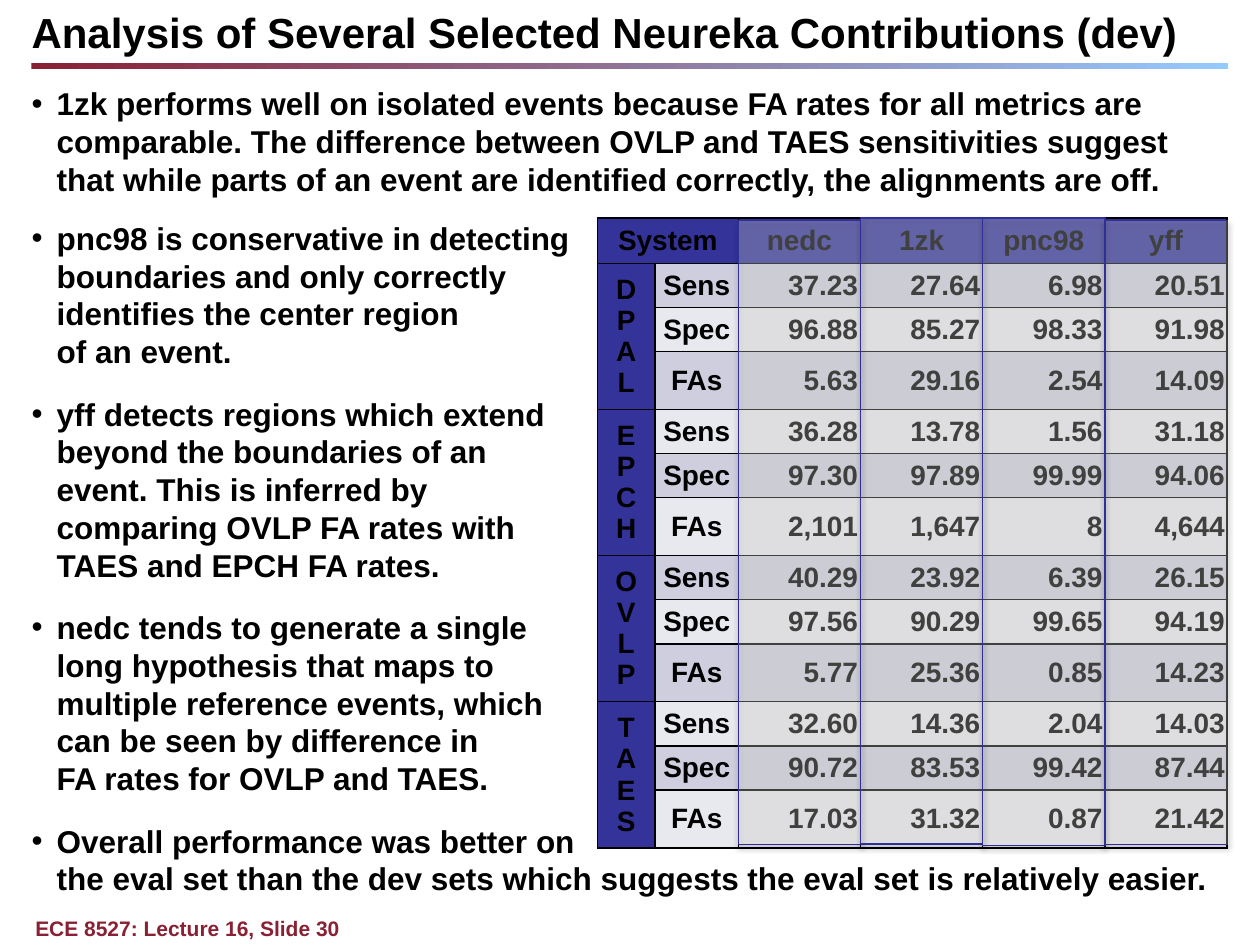
from lxml.etree import SubElement
from pptx import Presentation
from pptx.dml.color import RGBColor
from pptx.enum.shapes import MSO_SHAPE
from pptx.enum.text import MSO_ANCHOR, MSO_AUTO_SIZE, PP_ALIGN
from pptx.oxml.ns import qn
from pptx.util import Inches, Pt

TITLE = "Analysis of Several Selected Neureka Contributions (dev)"
FOOTER = "ECE 8527: Lecture 16, Slide 30"
FINDINGS = [
    ("1zk performs well on isolated events because FA rates for all metrics are comparable. "
     "The difference between OVLP and TAES sensitivities suggest that while parts of an event "
     "are identified correctly, the alignments are off.", 12),
    ("pnc98 is conservative in detecting\vboundaries and only correctly\v"
     "identifies the center region\vof an event.", 14),
    ("yff detects regions which extend\vbeyond the boundaries of an\v"
     "event. This is inferred by\vcomparing OVLP FA rates with\vTAES and EPCH FA rates.", 14),
    ("nedc tends to generate a single\vlong hypothesis that maps to\v"
     "multiple reference events, which\vcan be seen by difference in\v"
     "FA rates for OVLP and TAES.", 14),
    ("Overall performance was better on\vthe eval set than the dev sets which suggests "
     "the eval set is relatively easier.", 12),
]
SYSTEMS = ["nedc", "1zk", "pnc98", "yff"]
MEASURES = ["Sens", "Spec", "FAs"]
SCORES = {
    "DPAL": [["37.23", "27.64", "6.98", "20.51"],
             ["96.88", "85.27", "98.33", "91.98"],
             ["5.63", "29.16", "2.54", "14.09"]],
    "EPCH": [["36.28", "13.78", "1.56", "31.18"],
             ["97.30", "97.89", "99.99", "94.06"],
             ["2,101", "1,647", "8", "4,644"]],
    "OVLP": [["40.29", "23.92", "6.39", "26.15"],
             ["97.56", "90.29", "99.65", "94.19"],
             ["5.77", "25.36", "0.85", "14.23"]],
    "TAES": [["32.60", "14.36", "2.04", "14.03"],
             ["90.72", "83.53", "99.42", "87.44"],
             ["17.03", "31.32", "0.87", "21.42"]],
}
COLORS = {"text": "000000", "maroon": "892034", "sky": "95CAFF", "header": "333399",
          "odd": "CECEDE", "even": "E8E8EF", "veil": "FFFFF9", "veil_line": "2F2F98"}
COLUMN_WIDTHS = [0.46, 0.66] + [0.97] * len(SYSTEMS)
ROW_HEIGHTS = [0.36] + [0.35, 0.35, 0.46] * len(SCORES)
TABLE_LEFT, TABLE_TOP = 4.74, 1.73
VEILS = [(1.75, 4.95), (1.73, 4.97), (1.73, 4.98), (1.75, 4.95)]
NO_MARGINS = dict.fromkeys(["margin_left", "margin_top", "margin_right", "margin_bottom"], 0)


def color(name):
    return RGBColor.from_string(COLORS[name])


def apply(target, formats):
    for name, value in formats.items():
        setattr(target, name, value)


def style(paragraph, size, color_name="text", **formats):
    apply(paragraph, formats)
    apply(paragraph.font, {"size": Pt(size), "name": "Arial", "bold": True})
    paragraph.font.color.rgb = color(color_name)


def place(shape, left, top, width, height):
    apply(shape, {"left": Inches(left), "top": Inches(top),
                  "width": Inches(width), "height": Inches(height)})


def add_bullet(paragraph):
    properties = paragraph._p.get_or_add_pPr()
    properties.set("marL", str(Inches(0.2)))
    properties.set("indent", str(Inches(-0.2)))
    SubElement(properties, qn("a:buFont"), typeface="Arial")
    SubElement(properties, qn("a:buChar"), char="•")


def add_borders(cell):
    properties = cell._tc.get_or_add_tcPr()
    for side in ("lnL", "lnR", "lnT", "lnB"):
        line = SubElement(properties, qn(f"a:{side}"), w=str(Pt(1)))
        solid = SubElement(line, qn("a:solidFill"))
        SubElement(solid, qn("a:srgbClr"), val=COLORS["text"])


def fill_cell(cell, text, fill, align=PP_ALIGN.CENTER, pad=0.01):
    add_borders(cell)
    apply(cell, {"margin_left": Inches(0.02), "margin_right": Inches(0.02),
                 "margin_top": Inches(pad), "margin_bottom": Inches(pad),
                 "vertical_anchor": MSO_ANCHOR.MIDDLE})
    cell.fill.solid()
    cell.fill.fore_color.rgb = color(fill)
    cell.text = text
    style(cell.text_frame.paragraphs[0], 16, alignment=align)


def add_score_table(slide):
    table = slide.shapes.add_table(
        len(ROW_HEIGHTS), len(COLUMN_WIDTHS), Inches(TABLE_LEFT), Inches(TABLE_TOP),
        Inches(sum(COLUMN_WIDTHS)), Inches(sum(ROW_HEIGHTS))).table
    for column, width in zip(table.columns, COLUMN_WIDTHS):
        column.width = Inches(width)
    for row, height in zip(table.rows, ROW_HEIGHTS):
        row.height = Inches(height)
    for index, text in enumerate(["System", "", *SYSTEMS]):
        fill_cell(table.cell(0, index), text, "header")
    table.cell(0, 0).merge(table.cell(0, 1))
    for group, (metric, rows) in enumerate(SCORES.items()):
        first = 1 + group * len(MEASURES)
        for offset, (measure, values) in enumerate(zip(MEASURES, rows)):
            row = first + offset
            band = "odd" if row % 2 else "even"
            fill_cell(table.cell(row, 0), "" if offset else "\v".join(metric), "header",
                      pad=0.05)
            fill_cell(table.cell(row, 1), measure, band)
            for index, value in enumerate(values, 2):
                fill_cell(table.cell(row, index), value, band, PP_ALIGN.RIGHT)
        table.cell(first, 0).merge(table.cell(first + len(MEASURES) - 1, 0))


def add_veil(slide, left, top, width, height):
    veil = slide.shapes.add_shape(MSO_SHAPE.RECTANGLE, Inches(left), Inches(top),
                                  Inches(width), Inches(height))
    veil.fill.solid()
    veil.fill.fore_color.rgb = color("veil")
    tint = veil._element.spPr.find(qn("a:solidFill")).find(qn("a:srgbClr"))
    SubElement(tint, qn("a:alpha"), val="25000")
    veil.line.color.rgb = color("veil_line")
    veil.line.width = Pt(0.75)
    veil.shadow.inherit = False
    effects = veil._element.spPr.find(qn("a:effectLst"))
    shadow = SubElement(effects, qn("a:outerShdw"), blurRad=str(Pt(3.1)), dist=str(Pt(1.8)),
                        dir="5400000", rotWithShape="0")
    shade = SubElement(shadow, qn("a:srgbClr"), val=COLORS["text"])
    SubElement(shade, qn("a:alpha"), val="35000")


def main():
    deck = Presentation()
    apply(deck, {"slide_width": Inches(10), "slide_height": Inches(7.5)})
    slide = deck.slides.add_slide(deck.slide_layouts[1])

    rule = slide.shapes.add_shape(MSO_SHAPE.RECTANGLE, Inches(0.25), Inches(0.5),
                                  Inches(9.5), Inches(0.05))
    rule.shadow.inherit = False
    rule.line.fill.background()
    rule.fill.gradient()
    rule.fill.gradient_angle = 0
    for stop, (position, name) in zip(rule.fill.gradient_stops, [(0, "maroon"), (1, "sky")]):
        stop.position = position
        stop.color.rgb = color(name)

    title = slide.shapes.title
    body = slide.placeholders[1]
    footer = slide.shapes.add_textbox(0, 0, 0, 0)
    place(title, 0.25, 0, 9.5, 0.5)
    place(body, 0.25, 0.67, 9.5, 6.56)
    place(footer, 0.28, 7.27, 8.92, 0.2)
    for part, anchor in [(title, MSO_ANCHOR.MIDDLE), (body, MSO_ANCHOR.TOP),
                         (footer, MSO_ANCHOR.TOP)]:
        apply(part.text_frame, {**NO_MARGINS, "word_wrap": True, "vertical_anchor": anchor,
                                "auto_size": MSO_AUTO_SIZE.NONE})

    title.text_frame.text = TITLE
    style(title.text_frame.paragraphs[0], 24, alignment=PP_ALIGN.LEFT)
    footer.text_frame.text = FOOTER
    style(footer.text_frame.paragraphs[0], 12, "maroon")
    for index, (finding, gap) in enumerate(FINDINGS):
        frame = body.text_frame
        paragraph = frame.add_paragraph() if index else frame.paragraphs[0]
        paragraph.text = finding
        add_bullet(paragraph)
        style(paragraph, 18, space_before=Pt(0), space_after=Pt(gap), line_spacing=1.0)

    add_score_table(slide)
    veil_left = TABLE_LEFT + sum(COLUMN_WIDTHS[:2])
    for index, (top, height) in enumerate(VEILS):
        add_veil(slide, veil_left + index * 0.97, top, 0.97, height)
    deck.save("out.pptx")


if __name__ == "__main__":
    main()
